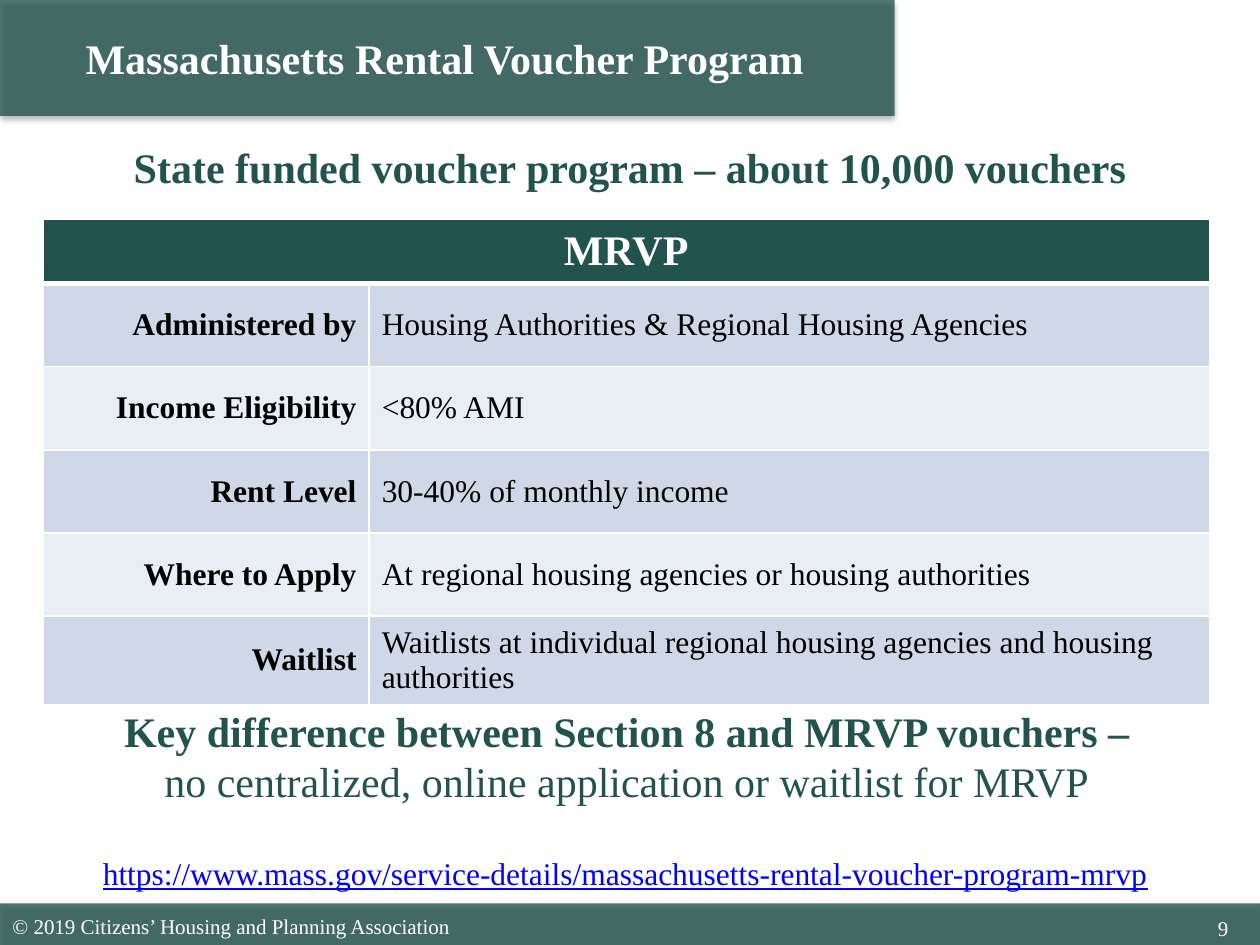
from lxml import etree
from pptx import Presentation
from pptx.dml.color import RGBColor as RGB
from pptx.enum.shapes import MSO_SHAPE as SHAPE
from pptx.enum.text import MSO_ANCHOR as ANCHOR, PP_ALIGN as ALIGN
from pptx.oxml import parse_xml
from pptx.oxml.ns import nsdecls, qn
from pptx.util import Inches, Pt

COLORS = {"green": "22534D", "white": "FFFFFF", "black": "000000", "link": "0000FF",
          "band": "D0D8E8", "light": "E9EDF4"}
HEAD = {"size": Pt(24), "bold": True}
BODY = {"size": Pt(18), "bold": False}
LABEL = {"size": Pt(18), "bold": True}
LINK = {"size": Pt(18), "underline": True}
SMALL = {"size": Pt(12)}
ROWS = [
    ("Administered by", "Housing Authorities & Regional Housing Agencies"),
    ("Income Eligibility", "<80% AMI"),
    ("Rent Level", "30-40% of monthly income"),
    ("Where to Apply", "At regional housing agencies or housing authorities"),
    ("Waitlist", "Waitlists at individual regional housing agencies and housing authorities"),
]


class Deck:
    """Draws styled elements on a slide grid of 100 columns by 75 rows."""

    def __init__(self, font="Times New Roman"):
        self.prs = Presentation()
        self.prs.slide_width, self.prs.slide_height = Inches(10), Inches(7.5)
        self.col, self.row = self.prs.slide_width / 100, self.prs.slide_height / 75
        self.font = font
        self.s = self.prs.slides.add_slide(self.prs.slide_layouts[6])

    def box(self, x, y, w, h):
        return (round(x * self.col), round(y * self.row),
                round(w * self.col), round(h * self.row))

    def shadow(self, blur, dist, alpha):
        return parse_xml(
            f'<a:effectLst {nsdecls("a")}><a:outerShdw blurRad="{Pt(blur)}" dist="{Pt(dist)}" '
            f'dir="5400000" rotWithShape="0"><a:srgbClr val="{COLORS["black"]}">'
            f'<a:alpha val="{alpha}000"/></a:srgbClr></a:outerShdw></a:effectLst>')

    def bar(self, *at):
        sp = self.s.shapes.add_shape(SHAPE.RECTANGLE, *self.box(*at))
        sp.line.fill.background()
        sp.fill.solid()
        sp.fill.fore_color.rgb = RGB.from_string(COLORS["green"])
        color = sp.fill._xPr.find(qn("a:solidFill"))[0]
        etree.SubElement(color, qn("a:alpha")).set("val", "78000")
        sp._element.spPr.append(self.shadow(3.1, 1.8, 35))

    def run(self, p, text, fmt, color):
        r = p.add_run()
        r.text = text
        for name, value in {"name": self.font, **fmt}.items():
            setattr(r.font, name, value)
        r.font.color.rgb = RGB.from_string(COLORS[color])
        return r

    def text(self, at, lines, color, align=ALIGN.CENTER, anchor=ANCHOR.MIDDLE,
             insets=(0.06, 0, 0, 0), spacing=None, shadow=False):
        tf = self.s.shapes.add_textbox(*self.box(*at)).text_frame
        tf.word_wrap, tf.vertical_anchor = True, anchor
        for side, inset in zip(("left", "top", "right", "bottom"), insets):
            setattr(tf, f"margin_{side}", Inches(inset))
        p = tf.paragraphs[0]
        p.alignment, p.line_spacing = align, spacing
        for i, (line, fmt) in enumerate(lines):
            if i:
                p.add_line_break()
            r = self.run(p, line, fmt, color)
            if shadow:
                r._r.rPr.find(qn("a:solidFill")).addnext(self.shadow(4, 3, 50))

    def cell(self, cell, text, fmt, color, fill, align, bottom=1):
        cell.vertical_anchor = ANCHOR.MIDDLE
        tc_pr = cell._tc.get_or_add_tcPr()
        for side, width in {"L": 1, "R": 1, "T": 1, "B": bottom}.items():
            tc_pr.append(parse_xml(
                f'<a:ln{side} {nsdecls("a")} w="{Pt(width)}"><a:solidFill>'
                f'<a:srgbClr val="{COLORS["white"]}"/></a:solidFill></a:ln{side}>'))
        cell.fill.solid()
        cell.fill.fore_color.rgb = RGB.from_string(COLORS[fill])
        p = cell.text_frame.paragraphs[0]
        p.alignment = align
        self.run(p, text, fmt, color)

    def table(self, at, title, rows, widths, heights):
        t = self.s.shapes.add_table(len(rows) + 1, 2, *self.box(*at)).table
        for column, w in zip(t.columns, widths):
            column.width = round(w * self.col)
        for row, h in zip(t.rows, heights):
            row.height = round(h * self.row)
        t.cell(0, 0).merge(t.cell(0, 1))
        for c in range(2):
            self.cell(t.cell(0, c), "" if c else title, HEAD, "white", "green",
                      ALIGN.CENTER, bottom=3)
        for i, (label, value) in enumerate(rows, 1):
            fill = "band" if i % 2 else "light"
            self.cell(t.cell(i, 0), label, LABEL, "black", fill, ALIGN.RIGHT)
            self.cell(t.cell(i, 1), value, BODY, "black", fill, ALIGN.LEFT)


def main():
    d = Deck()
    d.bar(0, 0, 71, 9.2)
    d.bar(0, 71.7, 100, 3.3)
    d.text((0, 71.7, 100, 3.3), [("9", SMALL)], "white", ALIGN.RIGHT, ANCHOR.TOP,
           (0.2, 0, 0.25, 0), spacing=1.5)
    d.text((0, 72, 72.1, 3), [("© 2019 Citizens’ Housing and Planning Association", SMALL)],
           "white", ALIGN.LEFT, insets=(0.1, 0.05, 0.1, 0.05))
    d.text((3.4, 9.1, 92.6, 8.3),
           [("State funded voucher program – about 10,000 vouchers", HEAD)], "green")
    d.text((0, 0, 70, 9.1), [("Massachusetts Rental Voucher Program", HEAD)], "white",
           shadow=True)
    d.table((3.4, 17.4, 92.6, 38.1), "MRVP", ROWS, (25.9, 66.7), [5.1] + [6.6] * 5)
    d.text((3.4, 56, 92.1, 10.7),
           [("Key difference between Section 8 and MRVP vouchers –", HEAD),
            ("no centralized, online application or waitlist for MRVP",
             {**HEAD, "bold": False})], "green", anchor=ANCHOR.TOP)
    d.text((0, 67.3, 100, 4),
           [("https://www.mass.gov/service-details/massachusetts-rental-voucher-program-mrvp",
             LINK)], "link", anchor=ANCHOR.TOP, insets=(0.1, 0.05, 0.17, 0.05))
    d.prs.save("out.pptx")


if __name__ == "__main__":
    main()
